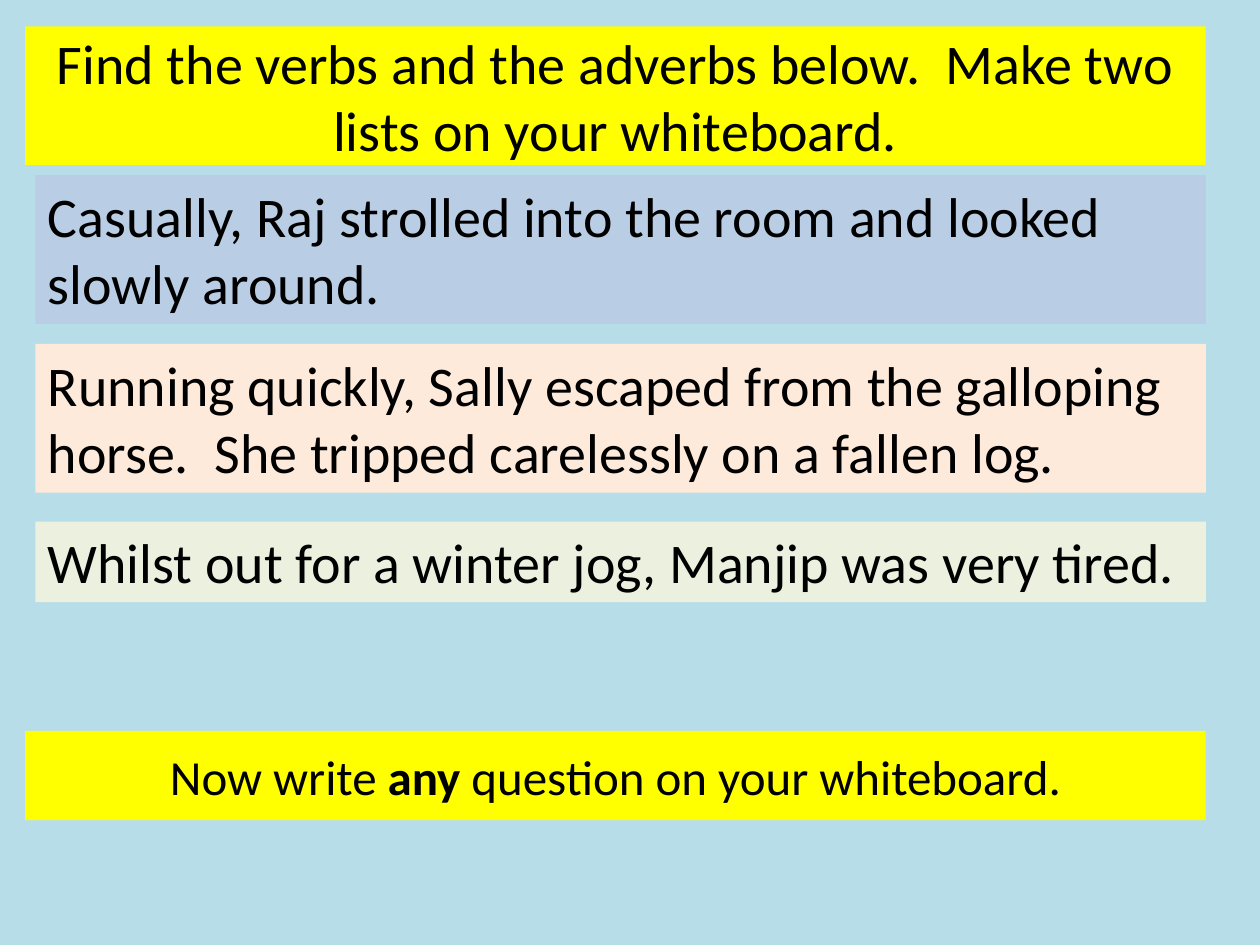
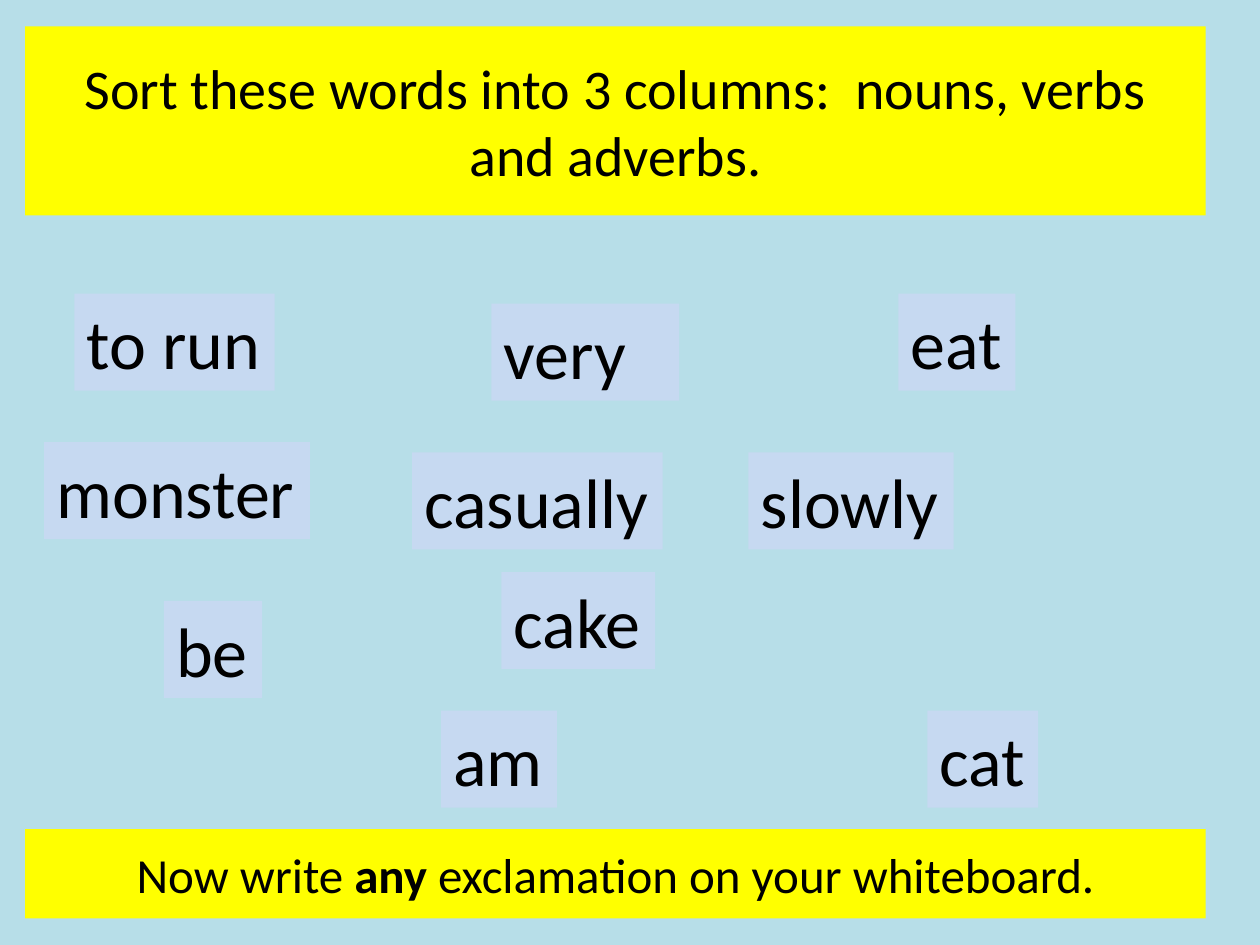
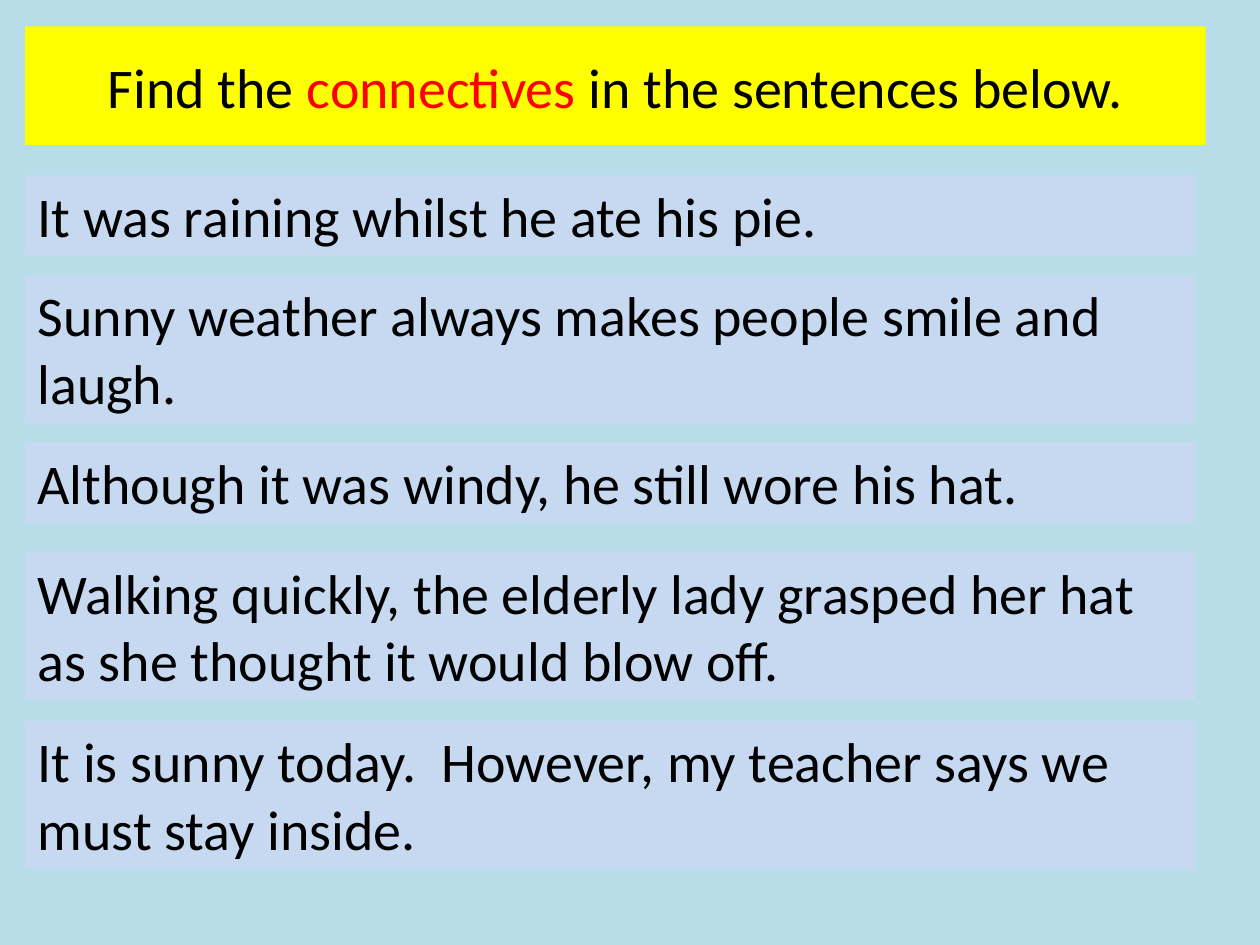
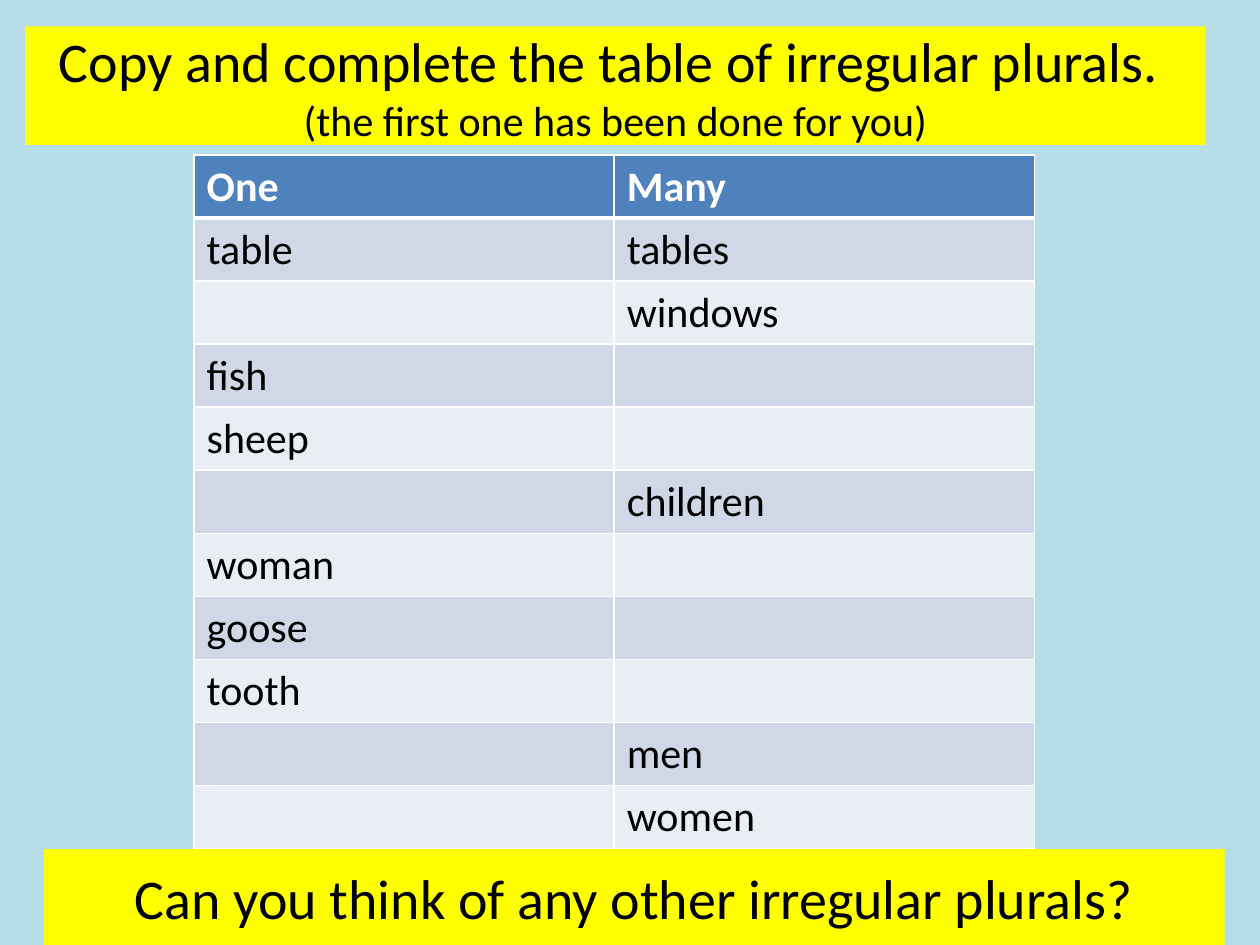
import pptx
import pptx.util
import pptx.dml.color
import pptx.enum.shapes
import pptx.enum.text
import pptx.oxml.ns
import lxml.etree

Inches = pptx.util.Inches
RGBColor = pptx.dml.color.RGBColor

# Colours
BACKGROUND = RGBColor(0xB7, 0xDE, 0xE8)
BAND = RGBColor(0xFF, 0xFF, 0x00)
PALE_BLUE = RGBColor(0xC6, 0xD9, 0xF1)
MID_BLUE = RGBColor(0xB9, 0xCD, 0xE5)
PEACH = RGBColor(0xFD, 0xEA, 0xDA)
PALE_GREEN = RGBColor(0xEB, 0xF1, 0xDE)
TABLE_HEADER = RGBColor(0x4F, 0x81, 0xBD)
TABLE_DARK = RGBColor(0xD0, 0xD8, 0xE8)
TABLE_LIGHT = RGBColor(0xE9, 0xED, 0xF4)
BLACK = RGBColor(0x00, 0x00, 0x00)
WHITE = RGBColor(0xFF, 0xFF, 0xFF)
RED = RGBColor(0xFF, 0x00, 0x00)

# Shared measures
FONT = "Calibri"
BAND_LEFT, BAND_WIDTH = 0.2, 9.37
TITLE_TOP = 0.21
SENTENCE_WIDTH, LINE_HEIGHT, TEXT_MARGIN = 9.29, 0.54, 0.1


class Deck:
    """Holds the style and the current slide."""

    def __init__(self):
        self.presentation = pptx.Presentation()
        self.presentation.slide_width = Inches(10)
        self.presentation.slide_height = Inches(7.5)
        self.slide = None

    def new_slide(self):
        self.slide = self.presentation.slides.add_slide(self.presentation.slide_layouts[6])
        self.slide.background.fill.solid()
        self.slide.background.fill.fore_color.rgb = BACKGROUND

    def format_run(self, run, size, color=BLACK, bold=False):
        run.font.name = FONT
        run.font.size = pptx.util.Pt(size)
        run.font.color.rgb = color
        run.font.bold = bold

    def band(self, top, height, *lines, size=32, left=BAND_LEFT):
        """Yellow band; each line is a list of (text, run format) pairs."""
        shape = self.slide.shapes.add_shape(
            pptx.enum.shapes.MSO_SHAPE.RECTANGLE,
            Inches(left), Inches(top), Inches(BAND_WIDTH), Inches(height))
        shape.shadow.inherit = False
        shape.fill.solid()
        shape.fill.fore_color.rgb = BAND
        shape.line.fill.background()
        text_frame = shape.text_frame
        text_frame.word_wrap = True
        text_frame.vertical_anchor = pptx.enum.text.MSO_ANCHOR.MIDDLE
        for index, line in enumerate(lines):
            paragraph = text_frame.add_paragraph() if index else text_frame.paragraphs[0]
            paragraph.alignment = pptx.enum.text.PP_ALIGN.CENTER
            for text, style in line:
                run = paragraph.add_run()
                run.text = text
                self.format_run(run, **{"size": size, **style})

    def task_band(self, top, kind):
        self.band(top, 0.71, [("Now write ", {}), ("any", {"bold": True}),
                              (f" {kind} on your whiteboard.", {})], size=28)

    def text_box(self, left, top, width, height, text, fill, size, wrap=True):
        box = self.slide.shapes.add_textbox(
            Inches(left), Inches(top), Inches(width), Inches(height))
        box.fill.solid()
        box.fill.fore_color.rgb = fill
        box.text_frame.word_wrap = wrap
        box.text_frame.auto_size = pptx.enum.text.MSO_AUTO_SIZE.SHAPE_TO_FIT_TEXT
        box.text_frame.text = text
        self.format_run(box.text_frame.paragraphs[0].runs[0], size)

    def sentence(self, left, top, line_count, text, fill):
        height = TEXT_MARGIN + LINE_HEIGHT * line_count
        self.text_box(left, top, SENTENCE_WIDTH, height, text, fill, 32)

    def cell_borders(self, cell, bottom_width):
        properties = cell._tc.get_or_add_tcPr()
        for side, width in (("L", 1), ("R", 1), ("T", 1), ("B", bottom_width)):
            line = lxml.etree.SubElement(properties, pptx.oxml.ns.qn(f"a:ln{side}"),
                                         w=str(pptx.util.Pt(width)))
            fill = lxml.etree.SubElement(line, pptx.oxml.ns.qn("a:solidFill"))
            lxml.etree.SubElement(fill, pptx.oxml.ns.qn("a:srgbClr"), val=str(WHITE))

    def table(self, left, top, width, row_height, rows, size):
        table = self.slide.shapes.add_table(
            len(rows), len(rows[0]), Inches(left), Inches(top),
            Inches(width), Inches(row_height * len(rows))).table
        for row_index, row in enumerate(rows):
            header = row_index == 0
            fill = TABLE_HEADER if header else (TABLE_LIGHT, TABLE_DARK)[row_index % 2]
            for column_index, text in enumerate(row):
                cell = table.cell(row_index, column_index)
                self.cell_borders(cell, 3 if header else 1)
                cell.fill.solid()
                cell.fill.fore_color.rgb = fill
                cell.text_frame.text = text
                for run in cell.text_frame.paragraphs[0].runs:
                    self.format_run(run, size, WHITE if header else BLACK, header)


def verbs_and_adverbs(deck):
    deck.new_slide()
    deck.band(TITLE_TOP, 1.1, [
        ("Find the verbs and the adverbs below.  Make two lists on your whiteboard.", {})])
    for top, line_count, fill, text in (
            (1.39, 2, MID_BLUE, "Casually, Raj strolled into the room and looked slowly around."),
            (2.73, 2, PEACH, "Running quickly, Sally escaped from the galloping horse.  "
                             "She tripped carelessly on a fallen log."),
            (4.14, 1, PALE_GREEN, "Whilst out for a winter jog, Manjip was very tired.")):
        deck.sentence(0.28, top, line_count, text, fill)
    deck.task_band(5.8, "question")


def word_sort(deck):
    deck.new_slide()
    deck.band(TITLE_TOP, 1.5, [
        ("Sort these words into 3 columns:  nouns, verbs and adverbs.", {})])
    for left, top, width, word in (
            (0.59, 2.33, 1.59, "to run"), (7.13, 2.33, 0.93, "eat"),
            (5.94, 3.59, 1.63, "slowly"), (3.9, 2.41, 1.49, "very"),
            (1.3, 4.77, 0.78, "be"), (3.5, 5.64, 0.92, "am"),
            (3.27, 3.59, 1.99, "casually"), (7.36, 5.64, 0.88, "cat"),
            (3.98, 4.54, 1.22, "cake"), (0.35, 3.51, 2.11, "monster")):
        # Only the "very" card is wider than its word
        deck.text_box(left, top, width, 0.77, word, PALE_BLUE, 40, wrap=word == "very")
    deck.task_band(6.58, "exclamation")


def connectives(deck):
    deck.new_slide()
    deck.band(TITLE_TOP, 0.94, [("Find the ", {}), ("connectives", {"color": RED}),
                                (" in the sentences below.", {})])
    for top, line_count, text in (
            (1.39, 1, "It was raining whilst he ate his pie."),
            (2.18, 2, "Sunny weather always makes people smile and laugh."),
            (3.51, 1, "Although it was windy, he still wore his hat."),
            (4.38, 2, "Walking quickly, the elderly lady grasped her hat "
                      "as she thought it would blow off."),
            (5.72, 2, "It is sunny today.  However, my teacher says we must stay inside.")):
        deck.sentence(BAND_LEFT, top, line_count, text, PALE_BLUE)


def irregular_plurals(deck):
    deck.new_slide()
    deck.band(TITLE_TOP, 0.94,
              [("Copy and complete the table of irregular plurals. ", {})],
              [("(the first one has been done for you)", {"size": 24})])
    deck.table(1.54, 1.23, 6.67, 0.5, (
        ("One", "Many"), ("table", "tables"), ("", "windows"), ("fish", ""),
        ("sheep", ""), ("", "children"), ("woman", ""), ("goose", ""),
        ("tooth", ""), ("", "men"), ("", "women")), 24)
    deck.band(6.74, 0.76, [("Can you think of any other irregular plurals?", {})], left=0.35)


def main():
    deck = Deck()
    for build_slide in (verbs_and_adverbs, word_sort, connectives, irregular_plurals):
        build_slide(deck)
    deck.presentation.save("out.pptx")


if __name__ == "__main__":
    main()
